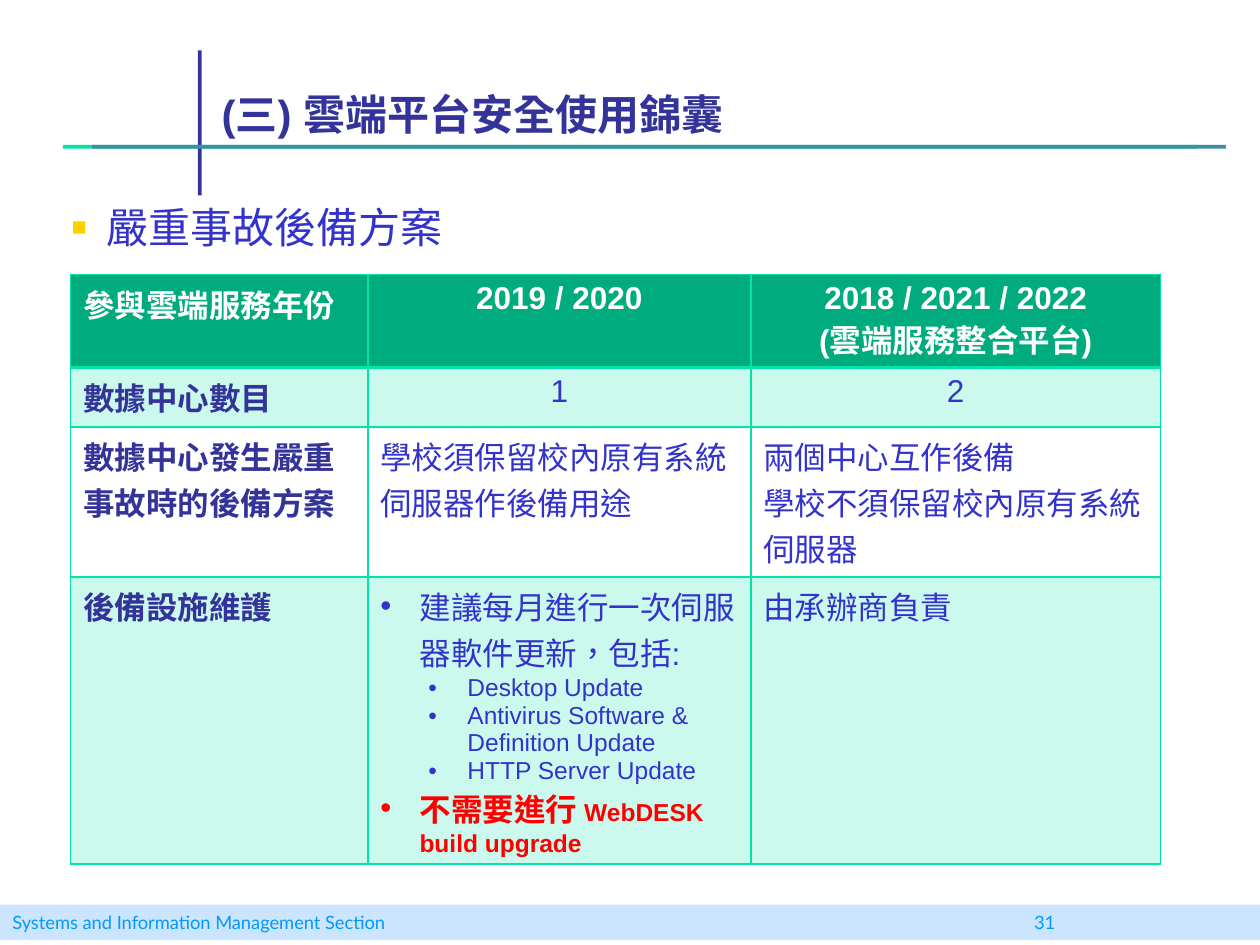
from lxml.etree import SubElement
from pptx import Presentation
from pptx.dml.color import RGBColor
from pptx.enum.shapes import MSO_SHAPE
from pptx.enum.text import MSO_ANCHOR, PP_ALIGN
from pptx.oxml.ns import qn
from pptx.util import Inches, Pt

COLORS = {
    "green": "00E4A8", "header": "00AB7E", "navy": "333399", "teal": "3F8DA5",
    "band": "99CCFF", "footer": "0099FF", "blue": "3333CC", "yellow": "FFCF01",
    "red": "FF0000", "white": "FFFFFF",
}


def add_run(paragraph, text, size, color, bold=False, font="Arial"):
    run = paragraph.add_run()
    run.text = text
    run.font.size = Pt(size)
    run.font.name = font
    run.font.bold = bold
    run.font.color.rgb = RGBColor.from_string(COLORS[color])
    # Traditional Chinese punctuation sits in the middle of its square
    run._r.get_or_add_rPr().set("lang", "zh-TW")


def add_bullet(paragraph, character, left, hanging, color=None, percent=None):
    properties = paragraph._p.get_or_add_pPr()
    properties.set("marL", str(Inches(left)))
    properties.set("indent", str(-Inches(hanging)))
    if color:
        bullet_color = SubElement(properties, qn("a:buClr"))
        SubElement(bullet_color, qn("a:srgbClr"), val=COLORS[color])
    if percent:
        SubElement(properties, qn("a:buSzPct"), val=str(percent * 1000))
    SubElement(properties, qn("a:buFont"), typeface="Arial")
    SubElement(properties, qn("a:buChar"), char=character)


presentation = Presentation()
presentation.slide_width = Inches(10)
presentation.slide_height = Inches(7.5)
slide = presentation.slides.add_slide(presentation.slide_layouts[5])

# Rules around the title and the footer band
bars = [
    (0.5, 1.15, 9, 0.03, "green"),
    (1.57, 0.4, 0.03, 1.15, "navy"),
    (0.73, 1.15, 9, 0.03, "teal"),
    (0, 7.18, 10, 0.28, "band"),
]
for left, top, width, height, color in bars:
    bar = slide.shapes.add_shape(
        MSO_SHAPE.RECTANGLE, Inches(left), Inches(top), Inches(width), Inches(height))
    bar.shadow.inherit = False
    bar.line.fill.background()
    bar.fill.solid()
    bar.fill.fore_color.rgb = RGBColor.from_string(COLORS[color])

# Footer text, with the page number at a tab stop
footer = bar
fill_color = footer._element.spPr.find(qn("a:solidFill"))[0]
SubElement(fill_color, qn("a:alpha"), val="50000")
footer.text_frame.vertical_anchor = MSO_ANCHOR.MIDDLE
paragraph = footer.text_frame.paragraphs[0]
paragraph.alignment = PP_ALIGN.LEFT
tabs = SubElement(paragraph._p.get_or_add_pPr(), qn("a:tabLst"))
SubElement(tabs, qn("a:tab"), pos=str(Inches(8.11)), algn="l")
add_run(paragraph, "Systems and Information Management Section\t31", 10.5, "footer", font="Lato")

# Title
title = slide.shapes.title
title.left, title.top = Inches(1.66), Inches(0.32)
title.width, title.height = Inches(7.83), Inches(0.83)
title.text_frame.vertical_anchor = MSO_ANCHOR.BOTTOM
paragraph = title.text_frame.paragraphs[0]
paragraph.alignment = PP_ALIGN.LEFT
add_run(paragraph, "(三) 雲端平台安全使用錦囊", 24, "navy", bold=True)

# Subject line
body = slide.shapes.add_textbox(Inches(0.47), Inches(1.55), Inches(8.75), Inches(5.23))
body.text_frame.word_wrap = True
paragraph = body.text_frame.paragraphs[0]
paragraph.alignment = PP_ALIGN.JUSTIFY
add_bullet(paragraph, "■", 0.28, 0.28, "yellow", 60)
add_run(paragraph, "嚴重事故後備方案", 24, "blue")

# Table: each cell is a list of paragraphs; the maintenance cell is filled below
rows = [
    [["參與雲端服務年份"], ["2019 / 2020"], ["2018 / 2021 / 2022", "(雲端服務整合平台)"]],
    [["數據中心數目"], ["1"], ["2"]],
    [["數據中心發生嚴重事故時的後備方案"], ["學校須保留校內原有系統伺服器作後備用途"],
     ["兩個中心互作後備", "學校不須保留校內原有系統伺服器"]],
    [["後備設施維護"], [], ["由承辦商負責"]],
]
column_widths = [2.36, 3.04, 3.25]
row_heights = [0.74, 0.47, 1.19, 2.28]
table = slide.shapes.add_table(
    len(rows), len(column_widths), Inches(0.56), Inches(2.18),
    Inches(sum(column_widths)), Inches(sum(row_heights))).table
table.horz_banding = False
for column, width in zip(table.columns, column_widths):
    column.width = Inches(width)
for row, height in zip(table.rows, row_heights):
    row.height = Inches(height)

for row_index, row in enumerate(rows):
    for column_index, lines in enumerate(row):
        cell = table.cell(row_index, column_index)
        header = row_index == 0
        label = column_index == 0
        color = "white" if header else "navy" if label else "blue"
        for line_index, line in enumerate(lines):
            frame = cell.text_frame
            paragraph = frame.add_paragraph() if line_index else frame.paragraphs[0]
            if row_index < 2 and not label:
                paragraph.alignment = PP_ALIGN.CENTER
            add_run(paragraph, line, 18, color, bold=header or label)

        # Borders come before the fill in the cell properties
        properties = cell._tc.get_or_add_tcPr()
        for side in ("lnL", "lnR", "lnT", "lnB"):
            thick = (header and side == "lnB") or (row_index == 1 and side == "lnT")
            border = SubElement(properties, qn(f"a:{side}"), w=str(Pt(2 if thick else 1)))
            border_fill = SubElement(border, qn("a:solidFill"))
            SubElement(border_fill, qn("a:srgbClr"), val=COLORS["green"])
        if row_index == 2:
            cell.fill.background()
        else:
            cell.fill.solid()
            cell.fill.fore_color.rgb = RGBColor.from_string(COLORS["header" if header else "green"])
            if not header:
                fill_color = properties.find(qn("a:solidFill"))[0]
                SubElement(fill_color, qn("a:alpha"), val="20000")

# Maintenance list: level, left indent, runs of (text, size, color, bold)
maintenance = [
    (1, 0.31, [("建議每月進行一次伺服器軟件更新，包括:", 18, "blue", False)]),
    (3, 0.69, [("Desktop Update", 14, "blue", False)]),
    (3, 0.69, [("Antivirus Software & Definition Update", 14, "blue", False)]),
    (3, 0.69, [("HTTP Server Update", 14, "blue", False)]),
    (2, 0.31, [("不需要進行 ", 18, "red", True), ("WebDESK build upgrade", 14, "red", True)]),
]
frame = table.cell(3, 1).text_frame
for index, (level, indent, runs) in enumerate(maintenance):
    paragraph = frame.add_paragraph() if index else frame.paragraphs[0]
    paragraph.level = level
    add_bullet(paragraph, "•", indent, 0.31)
    for text, size, color, bold in runs:
        add_run(paragraph, text, size, color, bold)

presentation.save("out.pptx")
